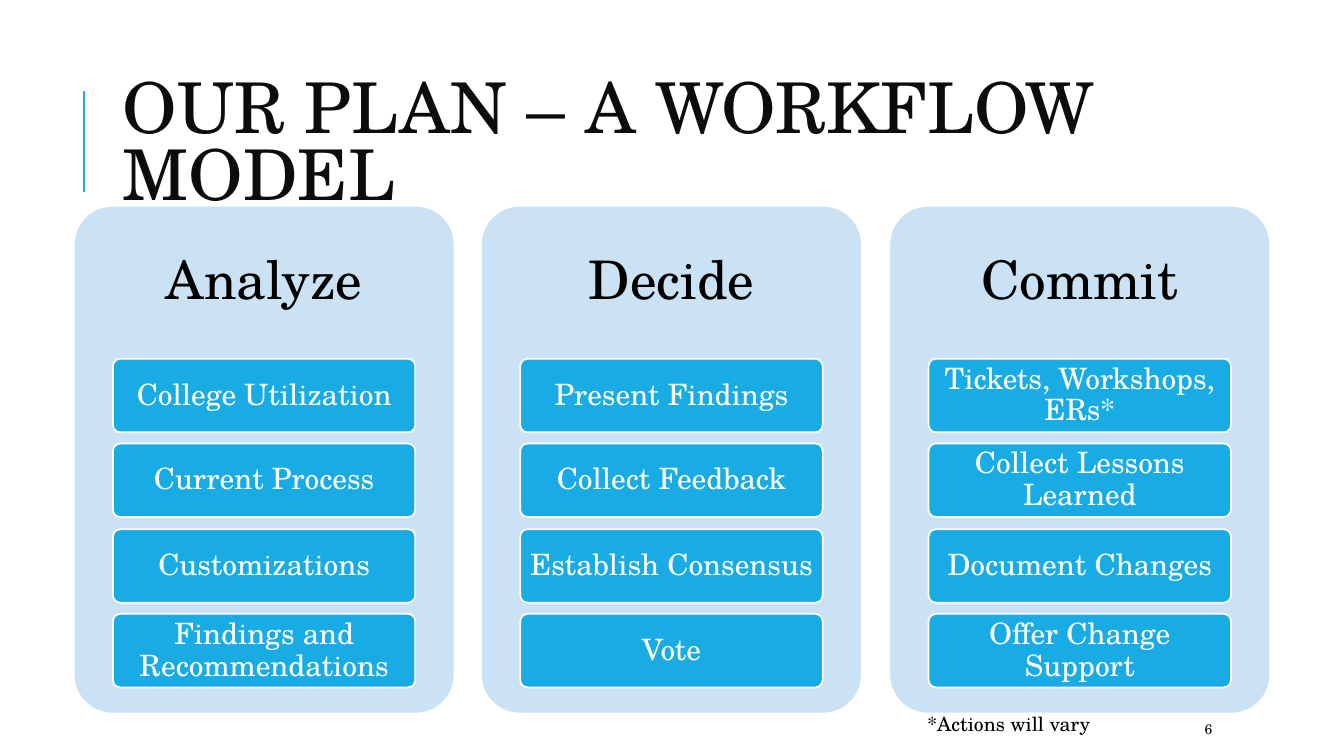
from lxml.etree import SubElement
from pptx import Presentation
from pptx.dml.color import RGBColor
from pptx.enum.shapes import MSO_CONNECTOR, MSO_SHAPE
from pptx.enum.text import MSO_ANCHOR as ANCHOR, PP_ALIGN as ALIGN
from pptx.oxml.ns import qn
from pptx.util import Pt

PX = 9144
FONT = "TeX Gyre Schola"
COLORS = {
    "accent": "1CADE4",
    "panel": "CBE2F5",
    "action": "19ACE4",
    "white": "FFFFFF",
    "title": "0C0C0C",
    "black": "000000",
}
PHASES = {
    "Analyze": ["College Utilization", "Current Process", "Customizations",
                "Findings and Recommendations"],
    "Decide": ["Present Findings", "Collect Feedback", "Establish Consensus", "Vote"],
    "Commit": ["Tickets, Workshops, ERs*", "Collect Lessons Learned",
               "Document Changes", "Offer Change Support"],
}


def color(name):
    """Return the named colour."""
    return RGBColor.from_string(COLORS[name])


def emu(*lengths):
    """Turn px lengths into EMU."""
    return [length * PX for length in lengths]


def write(holder, text, size, ink, align=ALIGN.LEFT, anchor=ANCHOR.MIDDLE,
          spacing=1.0, insets=(10, 5)):
    """Set and format the text of a shape."""
    frame = holder.text_frame
    frame.text = text
    frame.word_wrap = True
    frame.vertical_anchor = anchor
    frame.margin_left = frame.margin_right = insets[0] * PX
    frame.margin_top = frame.margin_bottom = insets[1] * PX
    paragraph = frame.paragraphs[0]
    paragraph.alignment = align
    paragraph.line_spacing = spacing
    font = paragraph.runs[0].font
    font.name, font.size = FONT, Pt(size)
    font.color.rgb = color(ink)


def add_label(slide, box, text, size, ink, **layout):
    """Add a text box."""
    write(slide.shapes.add_textbox(*emu(*box)), text, size, ink, **layout)


def add_rounded(slide, box, fill):
    """Add a filled rounded rectangle without a line."""
    rounded = slide.shapes.add_shape(MSO_SHAPE.ROUNDED_RECTANGLE, *emu(*box))
    rounded.adjustments[0] = 0.1
    rounded.shadow.inherit = False
    rounded.fill.solid()
    rounded.fill.fore_color.rgb = color(fill)
    rounded.line.fill.background()
    return rounded


def add_header(slide, left, top, width, height):
    """Place the title beside its accent rule."""
    rule = slide.shapes.add_connector(
        MSO_CONNECTOR.STRAIGHT, *emu(left, top + 126, left, top + 26))
    rule.line.color.rgb = color("accent")
    rule.line.width = Pt(1.5)
    SubElement(rule.element.spPr, qn("a:effectLst"))
    add_label(slide, (left + 29, top, width - 29, height),
              "OUR PLAN – A WORKFLOW MODEL", 50, "title", spacing=0.8)


def add_phase(slide, left, top, width, height, phase, actions):
    """Place a panel with its heading and a stack of actions."""
    add_rounded(slide, (left, top, width, height), "panel")
    add_label(slide, (left, top, width, 150), phase, 38, "black",
              align=ALIGN.CENTER, spacing=0.9, insets=(16, 16))
    margin, pitch = width // 10, 253 / 3
    for row, action in enumerate(actions):
        action_top = top + 151 + round(row * pitch)
        button = add_rounded(
            slide, (left + margin + 1, action_top, width * 8 // 10, 73), "action")
        button.line.color.rgb = color("white")
        button.line.width = Pt(1.25)
        write(button, action, 21, "white", align=ALIGN.CENTER, spacing=0.9,
              insets=(6, 4))


def add_workflow(slide, left, top, width, height):
    """Spread the phases evenly across the box."""
    panel_width = 376
    step = (width - panel_width) / (len(PHASES) - 1)
    for column, (phase, actions) in enumerate(PHASES.items()):
        add_phase(slide, left + round(column * step), top, panel_width, height,
                  phase, actions)


def add_footer(slide, left, top, width, height):
    """Place the footnote and the slide number."""
    add_label(slide, (left, top, 219, height), "*Actions will vary", 14, "black",
              anchor=ANCHOR.TOP)
    add_label(slide, (left + width - 106, top + 7, 106, 30), "6", 10, "title")


def main():
    """Build and save the slide."""
    deck = Presentation()
    deck.slide_width, deck.slide_height = emu(1333, 750)
    slide = deck.slides.add_slide(deck.slide_layouts[6])
    add_header(slide, 83, 64, 1092, 164)
    add_workflow(slide, 74, 205, 1185, 502)
    add_footer(slide, 910, 701, 381, 34)
    deck.save("out.pptx")


if __name__ == "__main__":
    main()
